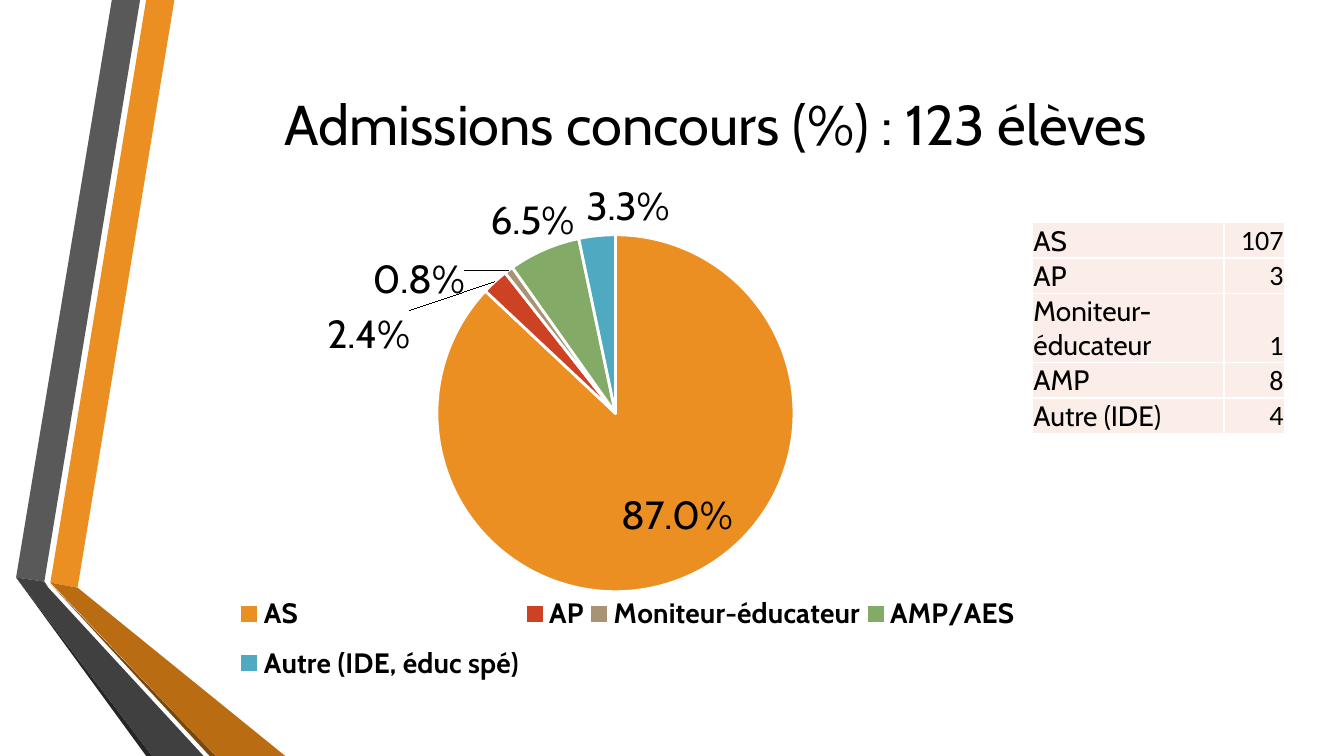
from lxml import etree
from pptx import Presentation
from pptx.chart.data import CategoryChartData
from pptx.dml.color import RGBColor
from pptx.enum.chart import XL_CHART_TYPE, XL_LABEL_POSITION, XL_LEGEND_POSITION
from pptx.enum.text import MSO_ANCHOR, PP_ALIGN
from pptx.oxml import parse_xml
from pptx.oxml.ns import nsdecls, qn
from pptx.util import Inches, Pt

PIE = XL_CHART_TYPE.PIE
INSIDE, OUTSIDE = XL_LABEL_POSITION.INSIDE_END, XL_LABEL_POSITION.OUTSIDE_END
BOTTOM_LEGEND = XL_LEGEND_POSITION.BOTTOM
MIDDLE, BOTTOM = MSO_ANCHOR.MIDDLE, MSO_ANCHOR.BOTTOM
LEFT, CENTER, RIGHT = PP_ALIGN.LEFT, PP_ALIGN.CENTER, PP_ALIGN.RIGHT


def rgb(value):
    return RGBColor.from_string(value)


def set_font(font, **values):
    font.color.rgb = rgb("000000")
    for name, value in values.items():
        setattr(font, name, value)


prs = Presentation()
prs.slide_width, prs.slide_height = Inches(13.33), Inches(7.5)
s = prs.slides.add_slide(prs.slide_layouts[5])

ribbons = [
    ("EB8F22", [(0.5, 5.78), (0.77, 5.83), (1.73, 0), (1.45, 0)]),
    ("595959", [(1.39, 0), (1.11, 0), (0.16, 5.73), (0.44, 5.77)]),
    ("262626", [(0.16, 5.73), (1.45, 7.5), (1.51, 7.5)]),
    ("7B480B", [(0.5, 5.79), (2.08, 7.5), (2.14, 7.5)]),
    ("B96C11", [(0.5, 5.78), (2.14, 7.5), (2.83, 7.5), (0.77, 5.83)]),
    ("404040", [(2.02, 7.5), (0.48, 5.83), (0.44, 5.77), (0.16, 5.73), (1.51, 7.5)]),
]
for color, points in ribbons:
    corners = [(Inches(x), Inches(y)) for x, y in points]
    builder = s.shapes.build_freeform(*corners[0])
    builder.add_line_segments(corners[1:], close=True)
    sp = builder.convert_to_shape()
    sp.shadow.inherit = False
    sp.fill.solid()
    sp.fill.fore_color.rgb = rgb(color)
    sp.line.fill.background()

title = s.shapes.title
title.left, title.top = Inches(1.62), Inches(0.76)
title.width, title.height = Inches(10.96), Inches(0.93)
tf = title.text_frame
tf.text = "Admissions concours (%) : 123 élèves"
tf.vertical_anchor = MIDDLE
p = tf.paragraphs[0]
p.alignment = CENTER
set_font(p.runs[0].font, name="Cabin", size=Pt(40))

admissions = [("AS", "107"), ("AP", "3"), ("Moniteur-éducateur", "1"), ("AMP", "8"), ("Autre (IDE)", "4")]
columns = [(1.9, "Cabin", LEFT), (0.6, "Calibri", RIGHT)]
table = s.shapes.add_table(len(admissions), len(columns), Inches(10.24), Inches(2.21),
                           Inches(2.5), Inches(1.05)).table
table.first_row = table.horz_banding = False
cell_format = {"vertical_anchor": BOTTOM, "margin_left": Inches(0.01), "margin_right": Inches(0.01),
               "margin_top": Inches(0.01), "margin_bottom": 0}
for col, (width, font_name, align) in enumerate(columns):
    table.columns[col].width = Inches(width)
    for row, record in enumerate(admissions):
        cell = table.cell(row, col)
        for name, value in cell_format.items():
            setattr(cell, name, value)
        cell.text = record[col]
        p = cell.text_frame.paragraphs[0]
        p.alignment = align
        set_font(p.runs[0].font, name=font_name, size=Pt(20))
        tc_pr = cell._tc.get_or_add_tcPr()
        for side in ("lnL", "lnR", "lnT", "lnB"):
            tc_pr.append(parse_xml(
                f'<a:{side} {nsdecls("a")} w="12700"><a:solidFill><a:srgbClr val="FFFFFF"/>'
                f'</a:solidFill></a:{side}>'))
        cell.fill.solid()
        cell.fill.fore_color.rgb = rgb("FBEEE8")

slices = [
    ("AS", 87, "EB8F22", INSIDE, 0.06, -0.06),
    ("AP", 2.4, "CD4223", OUTSIDE, -0.1, 0.15),
    ("Moniteur-éducateur", 0.8, "A89374", OUTSIDE, -0.05, 0.07),
    ("AMP/AES", 6.5, "83AA67", OUTSIDE, 0.04, 0),
    ("Autre (IDE, éduc spé)", 3.3, "4FA9C1", OUTSIDE, 0.09, 0),
]
data = CategoryChartData(number_format='0.0"%"')
data.categories = [item[0] for item in slices]
data.add_series("Series 1", [item[1] for item in slices])
chart = s.shapes.add_chart(PIE, Inches(2.08), Inches(1.68), Inches(8.05), Inches(5.32), data).chart
chart.has_title = False
set_font(chart.font, name="Cabin", size=Pt(10))
chart.has_legend = True
legend = chart.legend
legend.position = BOTTOM_LEGEND
legend.include_in_layout = False
set_font(legend.font, name="Cabin", size=Pt(20), bold=True)

plot = chart.plots[0]
plot.vary_by_categories = True
series = plot.series[0]
labels = series.data_labels
labels.show_value = True
set_font(labels.font, name="Cabin", size=Pt(28), bold=False)
for i, (category, value, color, position, dx, dy) in enumerate(slices):
    point = series.points[i]
    point.format.fill.solid()
    point.format.fill.fore_color.rgb = rgb(color)
    point.format.line.color.rgb = rgb("FFFFFF")
    point.format.line.width = Pt(2)
    label = point.data_label
    set_font(label.font, name="Cabin", size=Pt(28), bold=False)
    label.position = position
    d_lbl = labels._element.findall(qn("c:dLbl"))[i]
    d_lbl.insert(1, parse_xml(
        f'<c:layout {nsdecls("c")}><c:manualLayout><c:x val="{dx}"/><c:y val="{dy}"/>'
        '</c:manualLayout></c:layout>'))
leader = labels._element.find(qn("c:showLeaderLines"))
if leader is None:
    leader = etree.SubElement(labels._element, qn("c:showLeaderLines"))
leader.set("val", "1")

plot_area = chart._chartSpace.chart.plotArea
frames = [
    (plot_area, 0, '<c:layoutTarget val="inner"/>', (0.28, 0.12, 0.44, 0.67)),
    (legend._element, 1, "", (0.03, 0.77, 0.97, 0.21)),
]
for parent, index, target, (x, y, w, h) in frames:
    for layout in parent.findall(qn("c:layout")):
        parent.remove(layout)
    parent.insert(index, parse_xml(
        f'<c:layout {nsdecls("c")}><c:manualLayout>{target}<c:xMode val="edge"/><c:yMode val="edge"/>'
        f'<c:x val="{x}"/><c:y val="{y}"/><c:w val="{w}"/><c:h val="{h}"/></c:manualLayout></c:layout>'))

prs.save("out.pptx")
